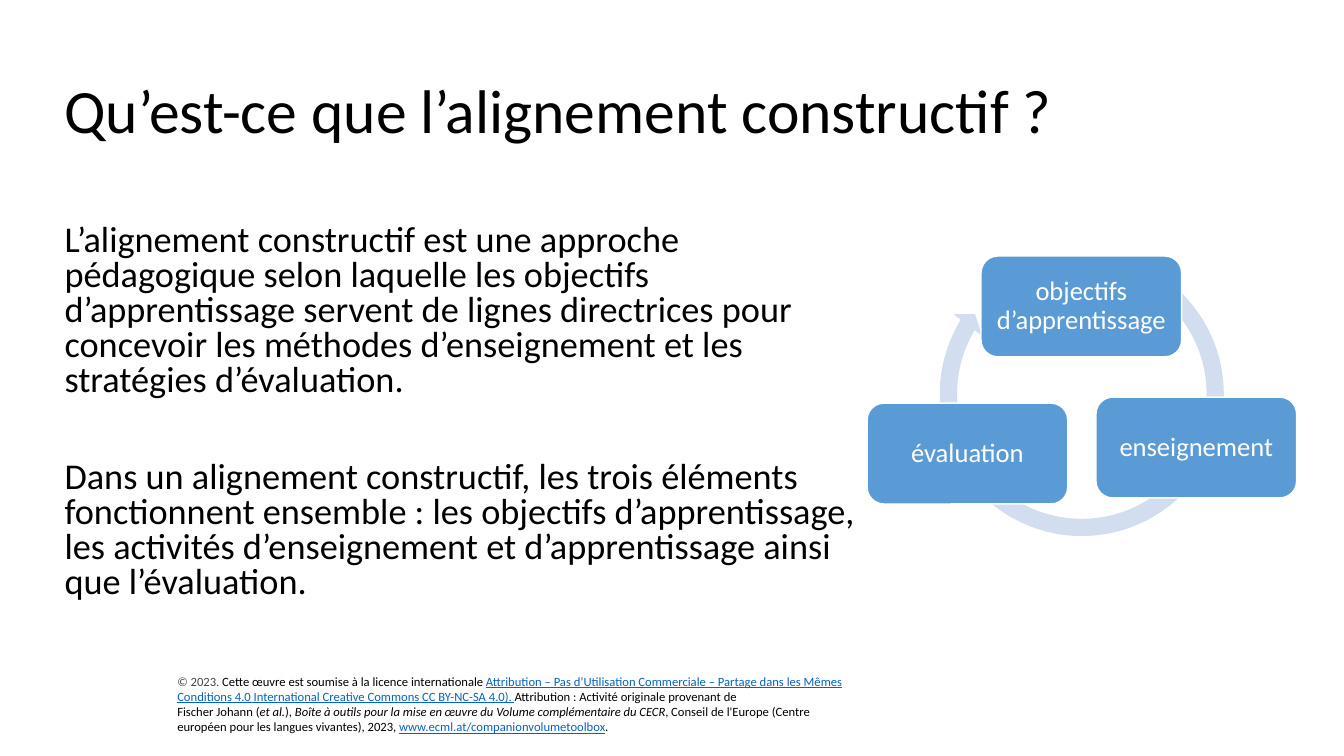
from dataclasses import dataclass

from pptx import Presentation
from pptx.dml.color import RGBColor
from pptx.enum import shapes, text
from pptx.oxml import xmlchemy
from pptx.util import Inches, Pt


@dataclass(frozen=True)
class Theme:
    font: str = "Calibri"
    ink: str = "000000"
    grey: str = "464646"
    link: str = "0563C1"
    white: str = "FFFFFF"
    card: str = "5B9BD5"
    arrow: str = "D2DEEF"
    title_size: float = 44
    body_size: float = 25.9
    card_size: float = 19
    licence_size: float = 9


@dataclass(frozen=True)
class Area:
    left: float
    top: float
    width: float
    height: float

    def lengths(self) -> list:
        return [Inches(n) for n in (self.left, self.top, self.width, self.height)]


@dataclass(frozen=True)
class Span:
    words: str
    color: str
    italic: bool = False
    underline: bool = False


@dataclass(frozen=True)
class Card:
    label: str
    left: float
    top: float


THEME = Theme()
TITLE = "Qu’est-ce que l’alignement constructif ?"
TITLE_AREA = Area(0.54, 0.4, 12.27, 1.45)
BODY = [
    "L’alignement constructif est une approche pédagogique selon laquelle les objectifs "
    "d’apprentissage servent de lignes directrices pour concevoir les méthodes "
    "d’enseignement et les stratégies d’évaluation.",
    "Dans un alignement constructif, les trois éléments fonctionnent ensemble : les objectifs "
    "d’apprentissage, les activités d’enseignement et d’apprentissage ainsi que l’évaluation.",
]
BODY_AREA = Area(0.54, 2.18, 8.06, 3.96)
BODY_GAP = 45
LICENCE = [
    [
        Span("© 2023. ", THEME.grey),
        Span("Cette œuvre est soumise à la licence internationale ", THEME.ink),
        Span("Attribution – Pas d’Utilisation Commerciale – Partage dans les Mêmes Conditions 4.0 "
             "International Creative Commons CC BY-NC-SA 4.0). ", THEME.link, underline=True),
        Span("Attribution : Activité originale provenant de", THEME.ink),
    ],
    [
        Span("Fischer Johann (", THEME.ink),
        Span("et al.", THEME.ink, italic=True),
        Span("), ", THEME.ink),
        Span("Boîte à outils pour la mise en œuvre du Volume complémentaire du CECR",
             THEME.ink, italic=True),
        Span(", Conseil de l'Europe (Centre européen pour les langues vivantes), 2023, ",
             THEME.ink),
        Span("www.ecml.at/companionvolumetoolbox", THEME.link, underline=True),
        Span(".", THEME.ink),
    ],
]
LICENCE_AREA = Area(1.66, 6.63, 6.85, 0.71)
CYCLE_AREA = Area(9.23, 2.41, 3, 3)
# Band width, head angle, end angle, start angle, head width
CYCLE_ADJUSTMENTS = [0.057, 3.405, 126.718, 180.941, 0.059]
CARD_WIDTH, CARD_HEIGHT, CARD_INSET = 1.99, 1, 0.07
CARDS = [
    Card("objectifs d’apprentissage", 9.73, 2.54),
    Card("enseignement", 10.87, 3.94),
    Card("évaluation", 8.6, 4),
]


def style(font, size: float, color: str) -> None:
    font.name = THEME.font
    font.size = Pt(size)
    font.color.rgb = RGBColor.from_string(color)


def place(shape, area: Area) -> None:
    shape.left, shape.top, shape.width, shape.height = area.lengths()


def fill_shape(shape, color: str) -> None:
    shape.shadow.inherit = False
    shape.fill.solid()
    shape.fill.fore_color.rgb = RGBColor.from_string(color)


def fill_title(box) -> None:
    place(box, TITLE_AREA)
    frame = box.text_frame
    frame.text = TITLE
    frame.auto_size = text.MSO_AUTO_SIZE.NONE
    frame.vertical_anchor = text.MSO_ANCHOR.MIDDLE
    para = frame.paragraphs[0]
    para.alignment = text.PP_ALIGN.LEFT
    para.line_spacing = 0.9
    style(para.runs[0].font, THEME.title_size, THEME.ink)


def fill_body(box) -> None:
    place(box, BODY_AREA)
    frame = box.text_frame
    frame.text = "\n".join(BODY)
    frame.auto_size = text.MSO_AUTO_SIZE.NONE
    for index, para in enumerate(frame.paragraphs):
        properties = para._p.get_or_add_pPr()
        properties.set("marL", "0")
        properties.set("indent", "0")
        properties.append(xmlchemy.OxmlElement("a:buNone"))
        para.line_spacing = 0.8
        para.space_before = Pt(BODY_GAP if index else 0)
        style(para.runs[0].font, THEME.body_size, THEME.ink)


def add_licence(page) -> None:
    frame = page.shapes.add_textbox(*LICENCE_AREA.lengths()).text_frame
    frame.word_wrap = True
    frame.vertical_anchor = text.MSO_ANCHOR.MIDDLE
    for index, spans in enumerate(LICENCE):
        para = frame.add_paragraph() if index else frame.paragraphs[0]
        for span in spans:
            run = para.add_run()
            run.text = span.words
            style(run.font, THEME.licence_size, span.color)
            run.font.italic = span.italic
            run.font.underline = span.underline


def add_cycle_arrow(page) -> None:
    arrow = page.shapes.add_shape(shapes.MSO_SHAPE.CIRCULAR_ARROW, *CYCLE_AREA.lengths())
    for index, value in enumerate(CYCLE_ADJUSTMENTS):
        arrow.adjustments[index] = value
    fill_shape(arrow, THEME.arrow)
    arrow.line.fill.background()


def add_card(page, card: Card) -> None:
    area = Area(card.left, card.top, CARD_WIDTH, CARD_HEIGHT)
    box = page.shapes.add_shape(shapes.MSO_SHAPE.ROUNDED_RECTANGLE, *area.lengths())
    fill_shape(box, THEME.card)
    box.line.color.rgb = RGBColor.from_string(THEME.white)
    box.line.width = Pt(1)
    frame = box.text_frame
    frame.text = card.label
    frame.word_wrap = True
    frame.vertical_anchor = text.MSO_ANCHOR.MIDDLE
    frame.margin_left = frame.margin_right = Inches(CARD_INSET)
    frame.margin_top = frame.margin_bottom = Inches(CARD_INSET)
    para = frame.paragraphs[0]
    para.alignment = text.PP_ALIGN.CENTER
    para.line_spacing = 0.9
    style(para.runs[0].font, THEME.card_size, THEME.white)


def main() -> None:
    deck = Presentation()
    deck.slide_width, deck.slide_height = Inches(13.33), Inches(7.5)
    page = deck.slides.add_slide(deck.slide_layouts[1])
    fill_title(page.shapes.title)
    fill_body(page.placeholders[1])
    add_licence(page)
    add_cycle_arrow(page)
    for card in CARDS:
        add_card(page, card)
    deck.save("out.pptx")


if __name__ == "__main__":
    main()
